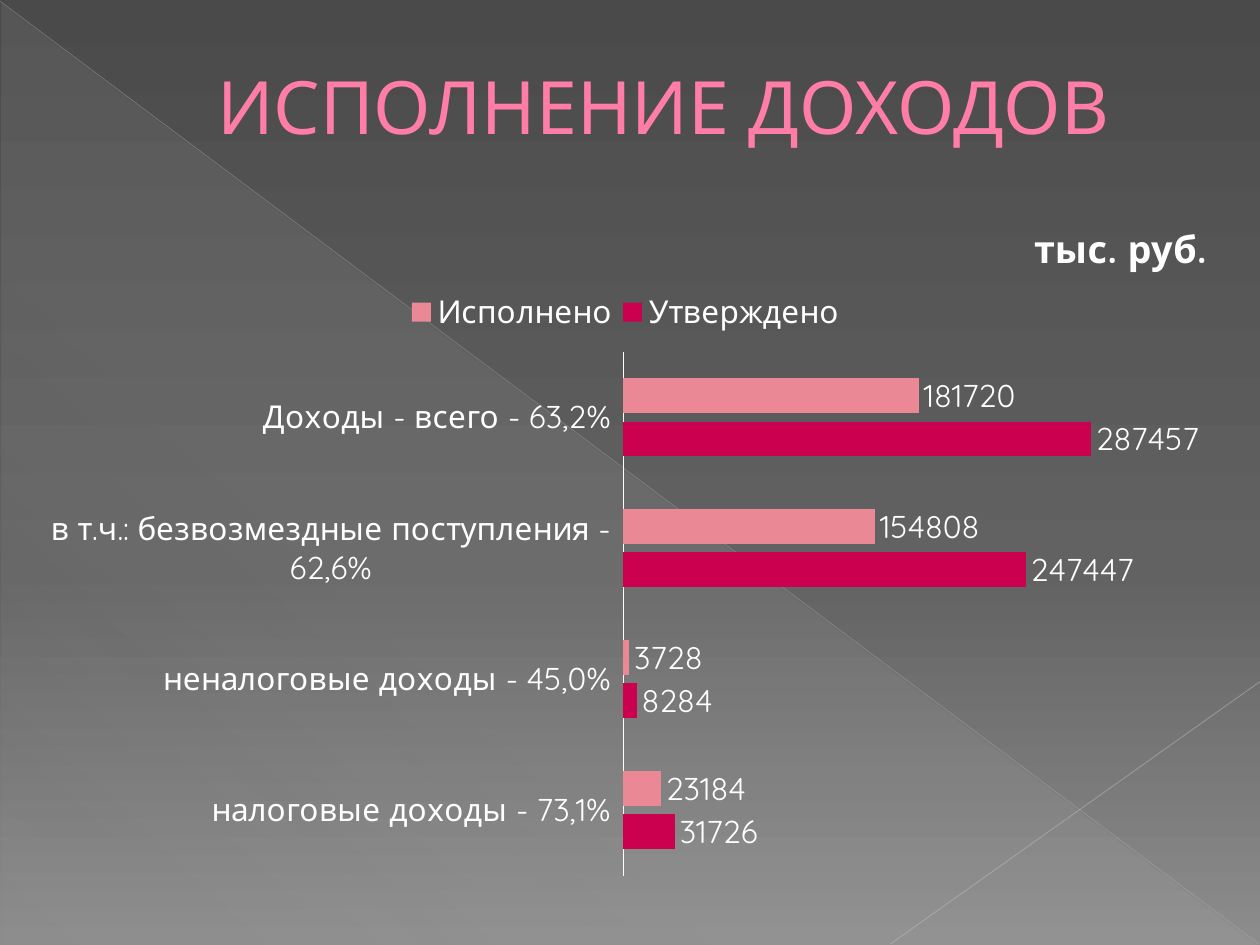
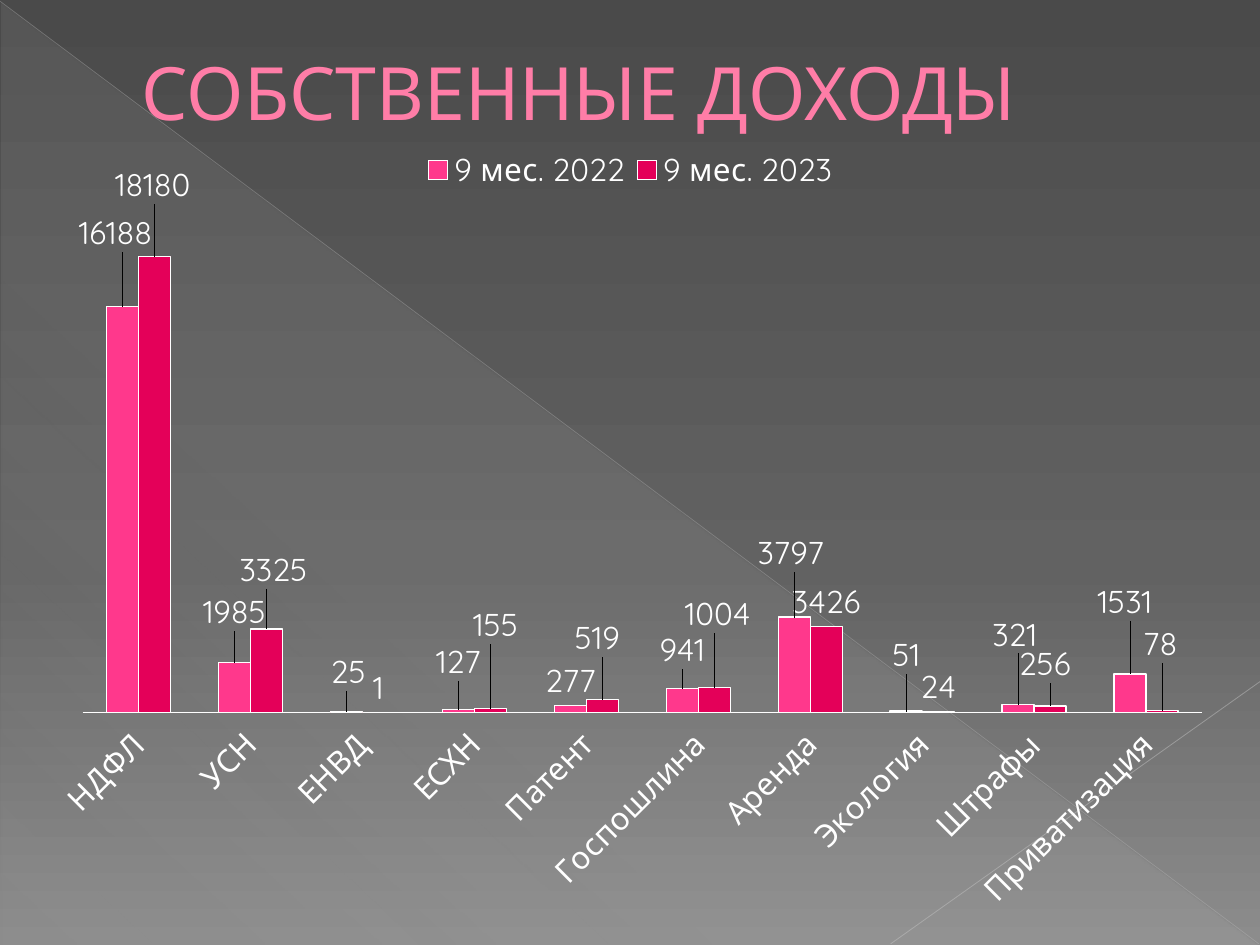
from lxml import etree
from pptx import Presentation
from pptx.chart.data import CategoryChartData
from pptx.dml.color import RGBColor
from pptx.enum.chart import XL_CHART_TYPE, XL_LABEL_POSITION, XL_LEGEND_POSITION, XL_TICK_LABEL_POSITION, XL_TICK_MARK
from pptx.enum.shapes import MSO_CONNECTOR, MSO_SHAPE
from pptx.enum.text import MSO_ANCHOR, PP_ALIGN
from pptx.oxml.ns import qn
from pptx.util import Pt

BAR, COLUMN = XL_CHART_TYPE.BAR_CLUSTERED, XL_CHART_TYPE.COLUMN_CLUSTERED
OUTSIDE_END = XL_LABEL_POSITION.OUTSIDE_END
LEGEND_TOP = XL_LEGEND_POSITION.TOP
NO_TICKS = XL_TICK_MARK.NONE
LABELS_LOW = XL_TICK_LABEL_POSITION.LOW
TRIANGLE, STRAIGHT = MSO_SHAPE.RIGHT_TRIANGLE, MSO_CONNECTOR.STRAIGHT
MIDDLE, LEFT, CENTER = MSO_ANCHOR.MIDDLE, PP_ALIGN.LEFT, PP_ALIGN.CENTER

FONT = "Quicksand"
WHITE = "FFFFFF"
TITLE_PINK = "FF7DA7"
WIDTH, HEIGHT = 720, 540
BACKGROUND = [(0, "4A4A4A", 100), (60, "626262", 100), (100, "8C8C8C", 100)]
SHEEN = [(0, "D2D2D2", 10), (70, "D2D2D2", 8), (100, "D2D2D2", 1)]

INCOME_CATEGORIES = [
    "налоговые доходы - 73,1%",
    "неналоговые доходы - 45,0%",
    "в т.ч.: безвозмездные поступления - 62,6%",
    "Доходы - всего - 63,2%",
]
INCOME_SERIES = [
    ("Утверждено", [31726, 8284, 247447, 287457], "CB004E"),
    ("Исполнено", [23184, 3728, 154808, 181720], "EB8896"),
]
OWN_CATEGORIES = ["НДФЛ", "УСН", "ЕНВД", "ЕСХН", "Патент", "Госпошлина",
                  "Аренда", "Экология", "Штрафы", "Приватизация"]
OWN_SERIES = [
    ("9 мес. 2022", [16188, 1985, 25, 127, 277, 941, 3797, 51, 321, 1531], "FF388C"),
    ("9 мес. 2023", [18180, 3325, 1, 155, 519, 1004, 3426, 24, 256, 78], "E40059"),
]
# Label shifts in points, by category index, one mapping per series
OWN_LABEL_SHIFTS = [
    {0: (-4, -28), 1: (0, -15), 2: (1, -9), 3: (0, -13), 5: (0, -8),
     6: (-2, -23), 7: (0, -18), 8: (-2, -26), 9: (-3, -27)},
    {0: (-1, -27), 1: (4, -20), 3: (3, -34), 4: (-3, -21), 5: (2, -28),
     8: (-3, -10), 9: (-1, -24)},
]


def color(value):
    return RGBColor.from_string(value)


def set_alpha(parent, percent):
    for node in parent.iter(qn("a:srgbClr")):
        etree.SubElement(node, qn("a:alpha")).set("val", str(percent * 1000))


def set_gradient(fill, element, stops, angle):
    """Fill with (position, colour, opacity) stops at a clockwise angle."""
    fill.gradient()
    gradient = next(element.iter(qn("a:gradFill")))
    for child in list(gradient):
        gradient.remove(child)
    stop_list = etree.SubElement(gradient, qn("a:gsLst"))
    for position, value, opacity in stops:
        stop = etree.SubElement(stop_list, qn("a:gs"), pos=str(position * 1000))
        etree.SubElement(stop, qn("a:srgbClr"), val=value)
        if opacity < 100:
            set_alpha(stop, opacity)
    etree.SubElement(gradient, qn("a:lin"), ang=str(angle * 60000), scaled="0")


def add_line(slide, start, end, value, width, opacity):
    line = slide.shapes.add_connector(STRAIGHT, *map(Pt, start + end))
    line.line.color.rgb = color(value)
    line.line.width = Pt(width)
    properties = line._element.spPr
    set_alpha(properties, opacity)
    etree.SubElement(properties, qn("a:effectLst"))


def add_base_slide(presentation):
    """Blank slide with the shared gradient, sheen and diagonals."""
    slide = presentation.slides.add_slide(presentation.slide_layouts[6])
    set_gradient(slide.background.fill, slide._element, BACKGROUND, 90)
    triangle = slide.shapes.add_shape(TRIANGLE, Pt(0.7), Pt(1.4), Pt(718.6), Pt(538.6))
    triangle.shadow.inherit = False
    triangle.line.fill.background()
    set_gradient(triangle.fill, triangle._element, SHEEN, 133)
    add_line(slide, (0, 0.7), (719.3, 539.3), "BFBFBF", 0.39, 35)
    add_line(slide, (WIDTH, 389.5), (509, 539.3), "C6C6C6", 0.47, 45)
    return slide


def add_title(slide, text, height, alignment):
    box = slide.shapes.add_textbox(Pt(36), Pt(21), Pt(648), Pt(height))
    frame = box.text_frame
    frame.word_wrap = True
    frame.vertical_anchor = MIDDLE
    paragraph = frame.paragraphs[0]
    paragraph.text = text
    paragraph.alignment = alignment
    paragraph._p.get_or_add_pPr().set("marL", str(Pt(38)))
    paragraph.font.name = FONT
    paragraph.font.size = Pt(42)
    paragraph.font.color.rgb = color(TITLE_PINK)


def set_layout(element, index, inner=False, **values):
    """Place a chart part by fractions of the chart size."""
    for old in element.findall(qn("c:layout")):
        element.remove(old)
    layout = etree.Element(qn("c:layout"))
    manual = etree.SubElement(layout, qn("c:manualLayout"))
    if inner:
        etree.SubElement(manual, qn("c:layoutTarget"), val="inner")
    if index == 0 or "w" in values:
        for mode in ("c:xMode", "c:yMode"):
            etree.SubElement(manual, qn(mode), val="edge")
    for name, value in values.items():
        etree.SubElement(manual, qn("c:" + name), val=str(round(value, 4)))
    element.insert(index, layout)


def add_chart(slide, kind, box, categories, series_list, maximum, plot_area, legend_area):
    data = CategoryChartData()
    data.categories = categories
    for name, values, _ in series_list:
        data.add_series(name, values)
    chart = slide.shapes.add_chart(kind, *map(Pt, box), data).chart
    chart.font.name = FONT
    chart.font.size = Pt(18)
    chart.font.color.rgb = color(WHITE)
    chart.has_title = False

    # Axes
    value_axis, category_axis = chart.value_axis, chart.category_axis
    value_axis.visible = False
    value_axis.has_major_gridlines = False
    value_axis.minimum_scale, value_axis.maximum_scale = 0, maximum
    category_axis.major_tick_mark = category_axis.minor_tick_mark = NO_TICKS
    category_axis.tick_label_position = LABELS_LOW
    category_axis.format.line.color.rgb = color(WHITE)
    category_axis.format.line.width = Pt(0.75)

    # Legend and plot area
    chart.has_legend = True
    chart.legend.position = LEGEND_TOP
    chart.legend.include_in_layout = False
    set_layout(chart.legend._element, 1, **legend_area)
    set_layout(chart._chartSpace.chart.plotArea, 0, inner=True, **plot_area)

    # Series
    plot = chart.plots[0]
    plot.gap_width = 150
    plot.vary_by_categories = False
    for series, (_, _, value) in zip(plot.series, series_list):
        series.format.fill.solid()
        series.format.fill.fore_color.rgb = color(value)
        series.invert_if_negative = False
        series.data_labels.show_value = True
        series.data_labels.position = OUTSIDE_END
    return chart


def add_unit_title(chart, text):
    paragraph = chart.chart_title.text_frame.paragraphs[0]
    paragraph.text = text
    paragraph.font.name = FONT
    paragraph.font.size = Pt(21.6)
    paragraph.font.bold = True
    paragraph.font.color.rgb = color(WHITE)
    title = chart.chart_title._element
    set_layout(title, 1, x=0.84, y=0.04)
    manual = title.find(qn("c:layout"))[0]
    for position, mode in enumerate(("c:xMode", "c:yMode")):
        manual.insert(position, etree.Element(qn(mode), val="edge"))


def shift_labels(chart, box, shifts_by_series):
    for series, shifts in zip(chart.plots[0].series, shifts_by_series):
        for index, (right, down) in shifts.items():
            series.points[index].data_label.position = OUTSIDE_END
        for label in series._element.iter(qn("c:dLbl")):
            right, down = shifts[int(label.find(qn("c:idx")).get("val"))]
            set_layout(label, 1, x=right / box[2], y=down / box[3])


def outline_columns(chart):
    for series in chart.plots[0].series:
        series.format.line.color.rgb = color(WHITE)
        series.format.line.width = Pt(0.75)


def slant_categories(chart):
    font = chart.category_axis.tick_labels.font
    font.name = FONT
    font.size = Pt(18)
    font.color.rgb = color(WHITE)
    body = next(chart.category_axis._element.iter(qn("a:bodyPr")))
    body.set("rot", str(-45 * 60000))
    body.set("vert", "horz")


def main():
    presentation = Presentation()
    presentation.slide_width, presentation.slide_height = Pt(WIDTH), Pt(HEIGHT)

    # Income execution
    slide = add_base_slide(presentation)
    add_title(slide, "ИСПОЛНЕНИЕ ДОХОДОВ", 78.5, CENTER)
    chart = add_chart(slide, BAR, (20, 106, 675, 402.5), INCOME_CATEGORIES, INCOME_SERIES, 350000,
                      dict(x=0.498, y=0.236, w=0.482, h=0.744),
                      dict(x=0.31, y=0.15, w=0.38, h=0.06))
    chart.plots[0].overlap = -25
    add_unit_title(chart, "тыс. руб.")

    # Own income by source
    slide = add_base_slide(presentation)
    add_title(slide, "СОБСТВЕННЫЕ ДОХОДЫ", 62, LEFT)
    box = (20, 77, 680.5, 448)
    chart = add_chart(slide, COLUMN, box, OWN_CATEGORIES, OWN_SERIES, 20000,
                      dict(x=0.04, y=0.097, w=0.94, h=0.64),
                      dict(x=0.32, y=0.015, w=0.36, h=0.06))
    outline_columns(chart)
    slant_categories(chart)
    shift_labels(chart, box, OWN_LABEL_SHIFTS)

    presentation.save("out.pptx")


if __name__ == "__main__":
    main()
